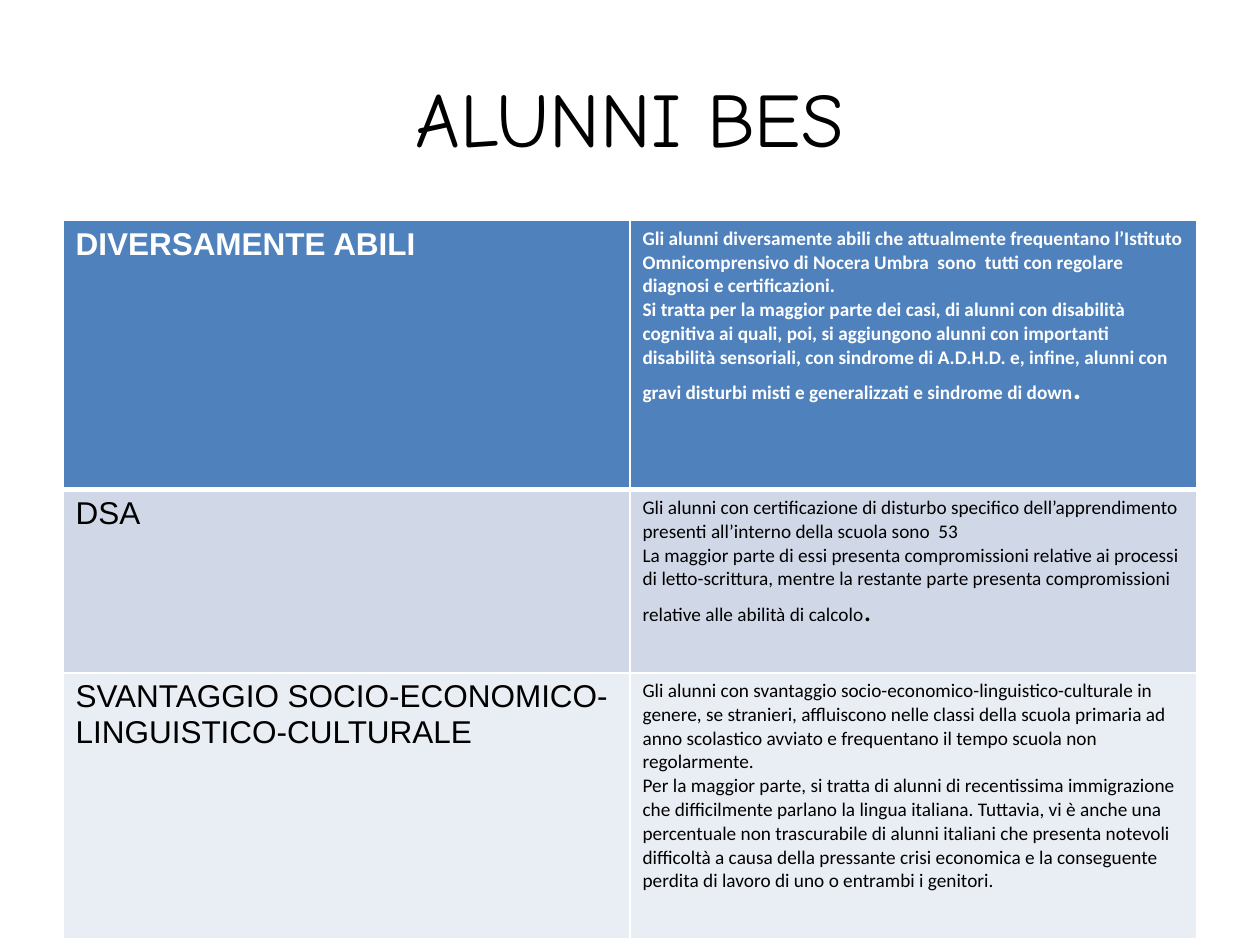
from dataclasses import dataclass

from lxml import etree
from pptx import Presentation
from pptx.dml.color import RGBColor
from pptx.enum.text import MSO_ANCHOR, PP_ALIGN
from pptx.oxml.ns import qn
from pptx.util import Inches, Pt

MIDDLE = MSO_ANCHOR.MIDDLE
CENTER = PP_ALIGN.CENTER
BLANK_LAYOUT = 6


@dataclass(frozen=True)
class Theme:
    title_font: str = "Comic Neue"
    label_font: str = "Arial"
    body_font: str = "Calibri"
    title_size: int = 44
    label_size: int = 18
    body_size: int = 11
    black: str = "000000"
    white: str = "FFFFFF"
    header: str = "4F81BD"
    band_dark: str = "D0D8E8"
    band_light: str = "E9EDF4"
    thin: int = 1
    thick: int = 3


@dataclass(frozen=True)
class Span:
    text: str
    font: str
    size: int


@dataclass(frozen=True)
class Category:
    label: str
    paragraphs: list[list[Span]]
    share: float
    fill: str
    color: str
    bold: bool = False


THEME = Theme()
WIDTH, HEIGHT = Inches(10), Inches(7.5)
MARGIN = 0.05
TITLE_TOP, TITLE_SHARE = 0.04, 1 / 6
TABLE_TOP, TABLE_SHARE = 7 / 30, 0.76
COLUMNS = 2


def body(text: str) -> Span:
    return Span(text, THEME.body_font, THEME.body_size)


FULL_STOP = Span(".", THEME.body_font, THEME.label_size)

CATEGORIES = [
    Category(
        "DIVERSAMENTE ABILI",
        [
            [body("Gli alunni diversamente abili che attualmente frequentano l’Istituto "
                  "Omnicomprensivo di Nocera Umbra  sono  tutti con regolare diagnosi e "
                  "certificazioni.")],
            [body("Si tratta per la maggior parte dei casi, di alunni con disabilità cognitiva "
                  "ai quali, poi, si aggiungono alunni con importanti disabilità sensoriali, "
                  "con sindrome di A.D.H.D. e, infine, alunni con gravi disturbi misti e "
                  "generalizzati e sindrome di down"), FULL_STOP],
        ],
        0.375, THEME.header, THEME.white, True,
    ),
    Category(
        "DSA",
        [
            [body("Gli alunni con certificazione di disturbo specifico dell’apprendimento "
                  "presenti all’interno della scuola sono  53")],
            [body("La maggior parte di essi presenta compromissioni relative ai processi di "
                  "letto-scrittura, mentre la restante parte presenta compromissioni relative "
                  "alle abilità di calcolo"), FULL_STOP],
        ],
        0.255, THEME.band_dark, THEME.black,
    ),
    Category(
        "SVANTAGGIO SOCIO-ECONOMICO-LINGUISTICO-CULTURALE",
        [
            [body("Gli alunni con svantaggio socio-economico-linguistico-culturale in genere, "
                  "se stranieri, affluiscono nelle classi della scuola primaria ad anno "
                  "scolastico avviato e frequentano il tempo scuola non regolarmente.")],
            [body("Per la maggior parte, si tratta di alunni di recentissima immigrazione che "
                  "difficilmente parlano la lingua italiana. Tuttavia, vi è anche una "
                  "percentuale non trascurabile di alunni italiani che presenta notevoli "
                  "difficoltà a causa della pressante crisi economica e la conseguente perdita "
                  "di lavoro di uno o entrambi i genitori.")],
        ],
        0.37, THEME.band_light, THEME.black,
    ),
]


def write(frame, paragraphs: list[list[Span]], color: str, bold: bool = False, align=None) -> None:
    frame.word_wrap = True
    for index, spans in enumerate(paragraphs):
        para = frame.add_paragraph() if index else frame.paragraphs[0]
        para.alignment = align
        for span in spans:
            run = para.add_run()
            run.text = span.text
            run.font.name = span.font
            run.font.size = Pt(span.size)
            run.font.bold = bold
            run.font.color.rgb = RGBColor.from_string(color)


def set_borders(cell, widths: dict[str, int]) -> None:
    properties = cell._tc.get_or_add_tcPr()
    for side, width in widths.items():
        line = etree.SubElement(properties, qn(f"a:ln{side}"), w=str(Pt(width)))
        fill = etree.SubElement(line, qn("a:solidFill"))
        etree.SubElement(fill, qn("a:srgbClr"), val=THEME.white)


def add_title(page, text: str) -> None:
    box = page.shapes.add_textbox(
        int(WIDTH * MARGIN), int(HEIGHT * TITLE_TOP),
        int(WIDTH * (1 - 2 * MARGIN)), int(HEIGHT * TITLE_SHARE),
    )
    box.text_frame.vertical_anchor = MIDDLE
    span = Span(text, THEME.title_font, THEME.title_size)
    write(box.text_frame, [[span]], THEME.black, align=CENTER)


def add_categories(page, categories: list[Category]) -> None:
    height = int(HEIGHT * TABLE_SHARE)
    table = page.shapes.add_table(
        len(categories), COLUMNS, int(WIDTH * MARGIN), int(HEIGHT * TABLE_TOP),
        int(WIDTH * (1 - 2 * MARGIN)), height,
    ).table
    table.first_row = False
    table.horz_banding = False
    for index, category in enumerate(categories):
        table.rows[index].height = int(height * category.share)
        label = Span(category.label, THEME.label_font, THEME.label_size)
        top = THEME.thick if index == 1 else THEME.thin
        bottom = THEME.thick if index == 0 else THEME.thin
        for column, paragraphs in enumerate([[[label]], category.paragraphs]):
            cell = table.cell(index, column)
            set_borders(cell, {"L": THEME.thin, "R": THEME.thin, "T": top, "B": bottom})
            cell.fill.solid()
            cell.fill.fore_color.rgb = RGBColor.from_string(category.fill)
            write(cell.text_frame, paragraphs, category.color, category.bold)


def main() -> None:
    deck = Presentation()
    deck.slide_width, deck.slide_height = WIDTH, HEIGHT
    page = deck.slides.add_slide(deck.slide_layouts[BLANK_LAYOUT])
    add_title(page, "ALUNNI BES")
    add_categories(page, CATEGORIES)
    deck.save("out.pptx")


if __name__ == "__main__":
    main()
